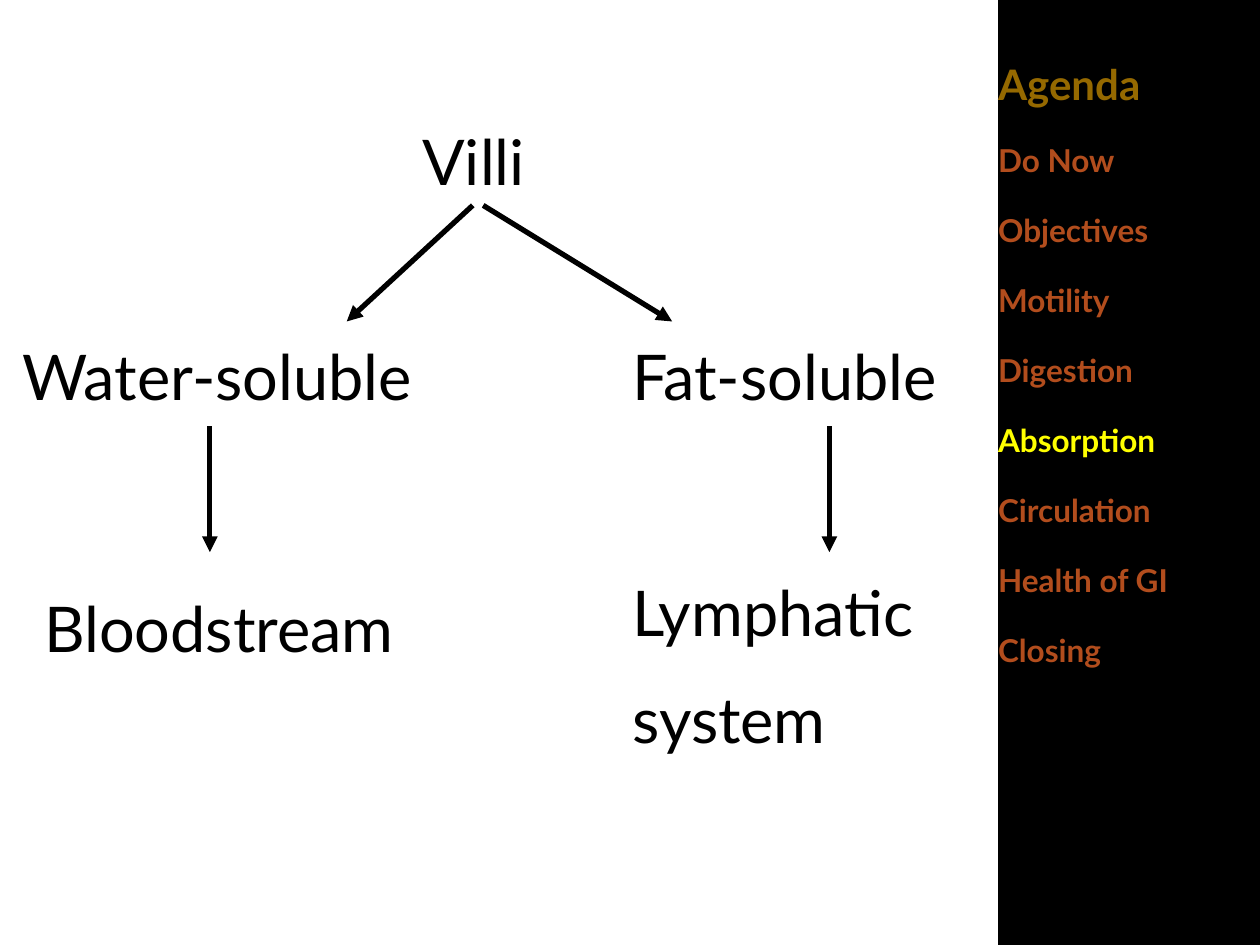
from dataclasses import dataclass

from lxml import etree
from pptx import Presentation
from pptx.dml.color import RGBColor
from pptx.enum.shapes import MSO_CONNECTOR, MSO_SHAPE
from pptx.enum.text import MSO_ANCHOR, MSO_AUTO_SIZE, PP_ALIGN
from pptx.oxml.ns import qn
from pptx.util import Cm, Pt

STRAIGHT = MSO_CONNECTOR.STRAIGHT
RECTANGLE = MSO_SHAPE.RECTANGLE
TOP = MSO_ANCHOR.TOP
GROW, FIXED = MSO_AUTO_SIZE.SHAPE_TO_FIT_TEXT, MSO_AUTO_SIZE.NONE
LEFT = PP_ALIGN.LEFT


@dataclass(frozen=True)
class Theme:
    font: str = "Lato"
    ink: str = "000000"
    heading: str = "956900"
    item: str = "B24D1D"
    current: str = "FFFF00"
    label_size: int = 36
    heading_size: int = 24
    item_size: int = 18
    line_width: int = 3


THEME = Theme()
SLIDE_W, SLIDE_H = 25.4, 19.05
SIDEBAR_X = 20.12
SIDEBAR_W = SLIDE_W - SIDEBAR_X
CURRENT = "Absorption"
AGENDA = ["Do Now", "Objectives", "Motility", "Digestion", CURRENT,
          "Circulation", "Health of GI", "Closing"]
VILLI = (8.26, 2.34, 3.61, 1.8)
LABELS = [
    (["Water-soluble"], (0.2, 6.68, 10.36, 1.8)),
    (["Fat-soluble"], (12.5, 6.68, 8.69, 1.8)),
    (["Bloodstream"], (0.64, 11.76, 8.69, 1.8)),
    (["Lymphatic", "system"], (12.5, 11.43, 8.69, 4.11)),
]
ARROWS = [
    (9.53, 4.14, 6.99, 6.48),
    (9.74, 4.14, 13.55, 6.48),
    (4.23, 8.59, 4.23, 11.13),
    (16.72, 8.59, 16.72, 11.13),
]


def place(sp, box):
    sp.left, sp.top, sp.width, sp.height = (Cm(v) for v in box)


def add_run(p, text, size, color, bold=False):
    r = p.add_run()
    r.text = text
    r.font.name = THEME.font
    r.font.size = Pt(size)
    r.font.bold = bold
    r.font.color.rgb = RGBColor.from_string(color)


def paragraph(tf, index):
    p = tf.add_paragraph() if index else tf.paragraphs[0]
    p.alignment = LEFT
    return p


def write_label(sp, lines):
    tf = sp.text_frame
    tf.word_wrap = True
    tf.auto_size = GROW
    tf.vertical_anchor = TOP
    for i, line in enumerate(lines):
        p = paragraph(tf, i)
        p.space_before = Pt(THEME.label_size / 2 if i else 0)
        add_run(p, line, THEME.label_size, THEME.ink)


def add_label(s, lines, box):
    write_label(s.shapes.add_textbox(*(Cm(v) for v in box)), lines)


def add_arrow(s, points):
    line = s.shapes.add_connector(STRAIGHT, *(Cm(v) for v in points))
    line.line.color.rgb = RGBColor.from_string(THEME.ink)
    line.line.width = Pt(THEME.line_width)
    etree.SubElement(line.line._get_or_add_ln(), qn("a:tailEnd"), type="triangle")
    etree.SubElement(line.element.spPr, qn("a:effectLst"))


def add_sidebar(s, body):
    sp = s.shapes.add_shape(RECTANGLE, Cm(SIDEBAR_X), 0, Cm(SIDEBAR_W), Cm(SLIDE_H))
    sp.shadow.inherit = False
    sp.fill.solid()
    sp.fill.fore_color.rgb = RGBColor.from_string(THEME.ink)
    sp.line.fill.background()
    body.element.addprevious(sp.element)


def write_agenda(body):
    place(body, (SIDEBAR_X, 1.42, SIDEBAR_W, 15.95))
    tf = body.text_frame
    tf.word_wrap = True
    tf.auto_size = FIXED
    tf.vertical_anchor = TOP
    tf.margin_left = tf.margin_top = tf.margin_right = tf.margin_bottom = 0
    for i, text in enumerate(["Agenda", *AGENDA]):
        p = paragraph(tf, i)
        p.line_spacing = Pt(22)
        p.space_before = Pt(18 if i else 4)
        pPr = p._p.get_or_add_pPr()
        pPr.set("marL", "0")
        pPr.set("indent", "0")
        etree.SubElement(pPr, qn("a:buNone"))
        if i:
            color = THEME.current if text == CURRENT else THEME.item
            add_run(p, text, THEME.item_size, color, True)
        else:
            add_run(p, text, THEME.heading_size, THEME.heading, True)


def main():
    prs = Presentation()
    prs.slide_width, prs.slide_height = Cm(SLIDE_W), Cm(SLIDE_H)
    s = prs.slides.add_slide(prs.slide_layouts[1])
    title, body = s.placeholders
    place(title, VILLI)
    write_label(title, ["Villi"])
    write_agenda(body)
    add_sidebar(s, body)
    for lines, box in LABELS:
        add_label(s, lines, box)
    for points in ARROWS:
        add_arrow(s, points)
    prs.save("out.pptx")


if __name__ == "__main__":
    main()
